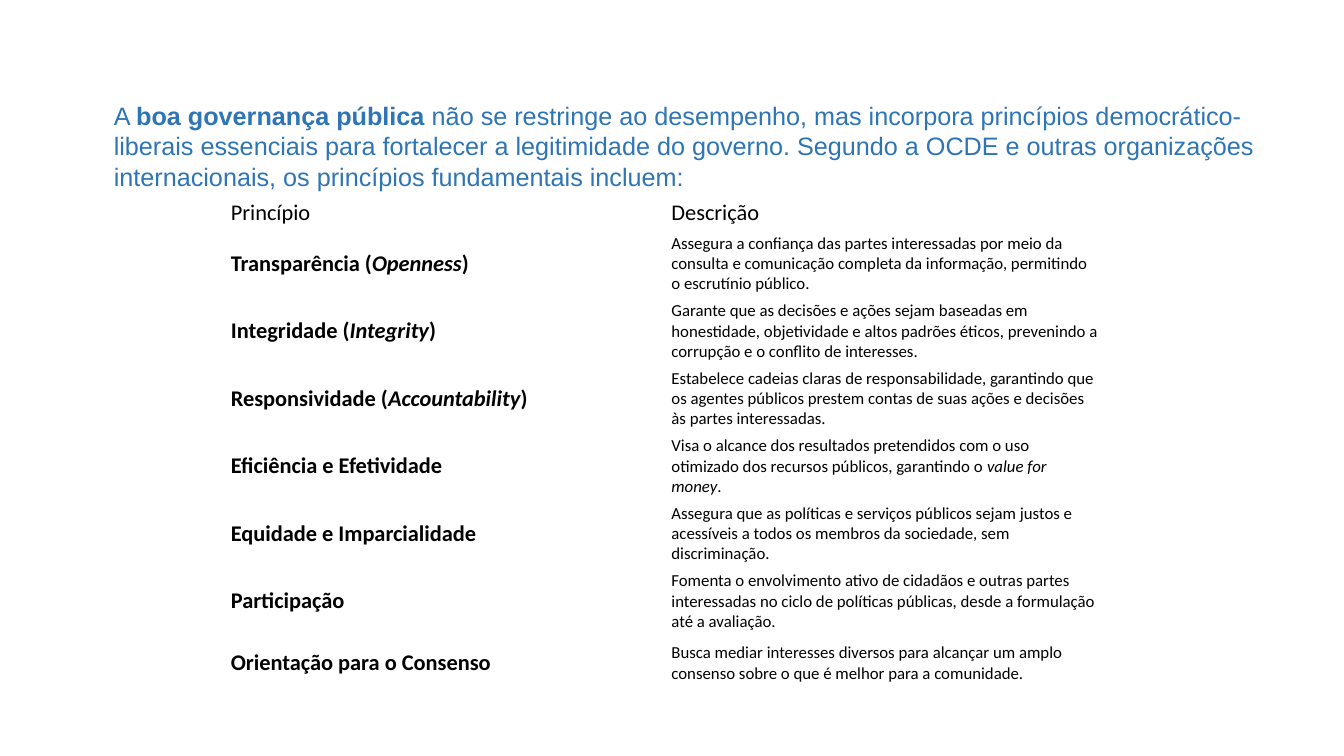
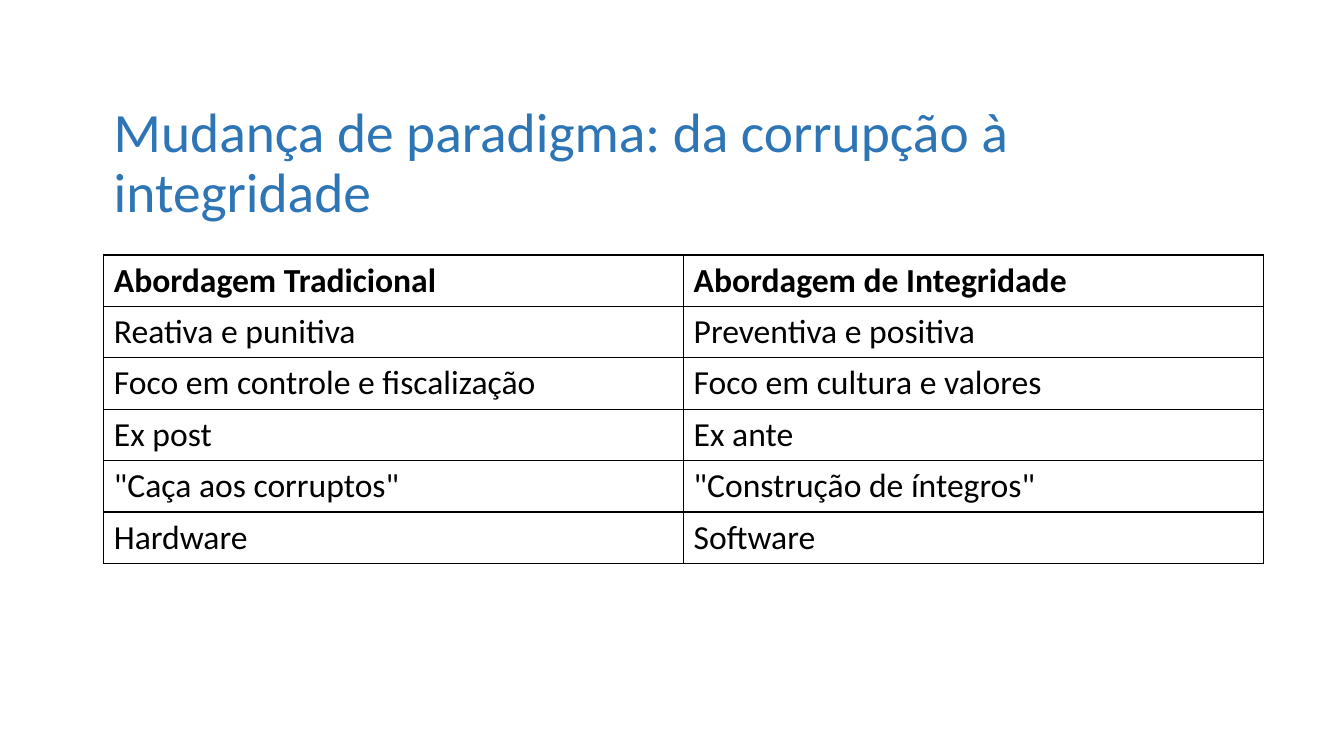
from dataclasses import dataclass

import lxml.etree
import pptx
import pptx.dml.color
import pptx.enum.text
import pptx.oxml.ns
import pptx.util

EMU_PER_PX = 9144
BLUE = "2E75B6"
BLACK = "000000"
PLAIN_TABLE = "{2D5ABB26-0587-4C30-8999-92F81FD0307C}"
MIDDLE = pptx.enum.text.MSO_ANCHOR.MIDDLE
qn = pptx.oxml.ns.qn


@dataclass(frozen=True)
class Span:
    text: str
    bold: bool = False
    italic: bool = False


@dataclass(frozen=True)
class Style:
    size: float
    color: str = BLACK
    font: str = "Calibri"
    spacing: float = 1.0


@dataclass(frozen=True)
class Area:
    left: int
    top: int
    width: int
    height: int


@dataclass(frozen=True)
class Entry:
    spans: tuple[Span, ...]
    style: Style


@dataclass(frozen=True)
class Grid:
    left: int
    top: int
    column_width: int
    heights: list[int]
    margin_x: int = 10
    margin_y: int = 5
    bordered: bool = False


LABEL = Style(16)
DESCRIPTION = Style(12)
COMPARISON = Style(24)
INTRO = Style(18, BLUE, "Arial")
TITLE = Style(39.6, BLUE, spacing=0.9)

PRINCIPLES = [
    ("Transparência", "Openness",
     "Assegura a confiança das partes interessadas por meio da consulta e comunicação completa da "
     "informação, permitindo o escrutínio público."),
    ("Integridade", "Integrity",
     "Garante que as decisões e ações sejam baseadas em honestidade, objetividade e altos padrões "
     "éticos, prevenindo a corrupção e o conflito de interesses."),
    ("Responsividade", "Accountability",
     "Estabelece cadeias claras de responsabilidade, garantindo que os agentes públicos prestem "
     "contas de suas ações e decisões às partes interessadas."),
    ("Eficiência e Efetividade", "",
     "Visa o alcance dos resultados pretendidos com o uso otimizado dos recursos públicos, "
     "garantindo o |value for money|."),
    ("Equidade e Imparcialidade", "",
     "Assegura que as políticas e serviços públicos sejam justos e acessíveis a todos os membros "
     "da sociedade, sem discriminação."),
    ("Participação", "",
     "Fomenta o envolvimento ativo de cidadãos e outras partes interessadas no ciclo de políticas "
     "públicas, desde a formulação até a avaliação."),
    ("Orientação para o Consenso", "",
     "Busca mediar interesses diversos para alcançar um amplo consenso sobre o que é melhor para "
     "a comunidade."),
]

APPROACHES = [
    ("Abordagem Tradicional", "Abordagem de Integridade"),
    ("Reativa e punitiva", "Preventiva e positiva"),
    ("Foco em controle e fiscalização", "Foco em cultura e valores"),
    ("Ex post", "Ex ante"),
    ('"Caça aos corruptos"', '"Construção de íntegros"'),
    ("Hardware", "Software"),
]


def px(length: int) -> pptx.util.Emu:
    return pptx.util.Emu(length * EMU_PER_PX)


def rgb(color: str) -> pptx.dml.color.RGBColor:
    return pptx.dml.color.RGBColor.from_string(color)


def italic_spans(marked: str, bold: bool = False) -> tuple[Span, ...]:
    return tuple(Span(text, bold, index % 2 == 1) for index, text in enumerate(marked.split("|")))


def write(frame, entry: Entry) -> None:
    para = frame.paragraphs[0]
    para.line_spacing = entry.style.spacing
    for span in entry.spans:
        run = para.add_run()
        run.text = span.text
        run.font.size = pptx.util.Pt(entry.style.size)
        run.font.name = entry.style.font
        run.font.color.rgb = rgb(entry.style.color)
        run.font.bold = span.bold
        run.font.italic = span.italic


def add_heading(page, area: Area, entry: Entry) -> None:
    box = page.shapes.add_textbox(px(area.left), px(area.top), px(area.width), px(area.height))
    box.text_frame.word_wrap = True
    box.text_frame.vertical_anchor = MIDDLE
    write(box.text_frame, entry)


def add_borders(cell) -> None:
    properties = cell._tc.get_or_add_tcPr()
    for index, side in enumerate(("a:lnL", "a:lnR", "a:lnT", "a:lnB")):
        line = lxml.etree.Element(qn(side), w=str(pptx.util.Pt(1)))
        fill = lxml.etree.SubElement(line, qn("a:solidFill"))
        lxml.etree.SubElement(fill, qn("a:srgbClr"), val=BLACK)
        properties.insert(index, line)


def add_grid(page, grid: Grid, rows: list[tuple[Entry, Entry]]) -> None:
    columns = len(rows[0])
    graphic = page.shapes.add_table(
        len(rows), columns, px(grid.left), px(grid.top),
        px(grid.column_width * columns), px(sum(grid.heights)))
    table = graphic.table
    table.first_row = False
    table.horz_banding = False
    table._tbl.tblPr.find(qn("a:tableStyleId")).text = PLAIN_TABLE
    for column in table.columns:
        column.width = px(grid.column_width)
    for row, height, entries in zip(table.rows, grid.heights, rows):
        row.height = px(height)
        for cell, entry in zip(row.cells, entries):
            cell.fill.background()
            cell.vertical_anchor = MIDDLE
            cell.margin_left = cell.margin_right = px(grid.margin_x)
            cell.margin_top = cell.margin_bottom = px(grid.margin_y)
            if grid.bordered:
                add_borders(cell)
            write(cell.text_frame, entry)


def build_principles(page) -> None:
    rows = [(Entry((Span("Princípio"),), LABEL), Entry((Span("Descrição"),), LABEL))]
    for name, english, description in PRINCIPLES:
        label = f"{name} (|{english}|)" if english else name
        rows.append((Entry(italic_spans(label, bold=True), LABEL),
                     Entry(italic_spans(description), DESCRIPTION)))
    add_grid(page, Grid(223, 195, 437, [33] + [67] * 6 + [56], 6, 3), rows)
    intro = (
        Span("A "),
        Span("boa governança pública ", bold=True),
        Span("não se restringe ao desempenho, mas incorpora princípios democrático-liberais "
             "essenciais para fortalecer a legitimidade do governo. Segundo a OCDE e outras "
             "organizações internacionais, os princípios fundamentais incluem:"),
    )
    add_heading(page, Area(103, 94, 1205, 101), Entry(intro, INTRO))


def build_paradigm(page) -> None:
    title = (Span("Mudança de paradigma: da corrupção à integridade"),)
    add_heading(page, Area(103, 98, 1150, 131), Entry(title, TITLE))
    rows = [
        tuple(Entry((Span(text, bold=index == 0),), COMPARISON) for text in pair)
        for index, pair in enumerate(APPROACHES)
    ]
    add_grid(page, Grid(103, 253, 575, [51] * len(rows), bordered=True), rows)


def main() -> None:
    deck = pptx.Presentation()
    deck.slide_width = px(1333)
    deck.slide_height = px(750)
    for build in (build_principles, build_paradigm):
        build(deck.slides.add_slide(deck.slide_layouts[6]))
    deck.save("out.pptx")


if __name__ == "__main__":
    main()
